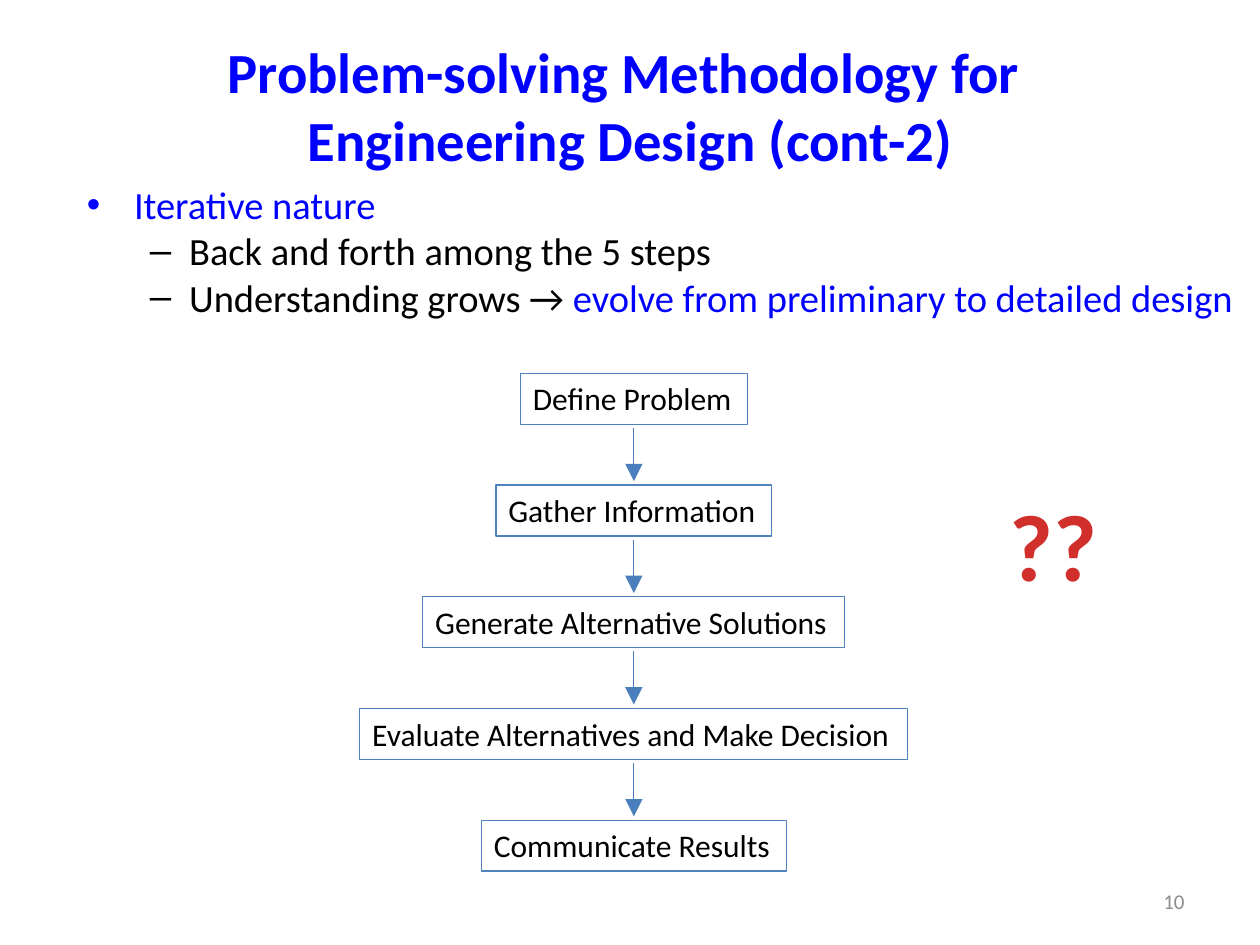
from lxml import etree
from pptx import Presentation
from pptx.dml.color import RGBColor
from pptx.enum import shapes, text
from pptx.oxml import ns
from pptx.util import Pt

BLUE = RGBColor(0x00, 0x00, 0xFF)
BLACK = RGBColor(0x00, 0x00, 0x00)
EDGE = RGBColor(0x4F, 0x81, 0xBD)
ARROW = RGBColor(0x4B, 0x7E, 0xBC)
RED = RGBColor(0xD0, 0x2F, 0x2C)
GRAY = RGBColor(0x8C, 0x8C, 0x8C)
FONT = "Calibri"

TITLE = "Problem-solving Methodology for \vEngineering Design (cont-2)"
# level, runs of (words, colour)
POINTS = [
    (0, [("Iterative nature", BLUE)]),
    (1, [("Back and forth among the 5 steps", BLACK)]),
    (1, [("Understanding grows → ", BLACK),
         ("evolve from preliminary to detailed design", BLUE)]),
]
# level -> bullet, left margin, hanging indent
BULLETS = [("•", 27, 27), ("–", 58.5, 22.5)]
# label, box width
STEPS = [
    ("Define Problem", 129.6),
    ("Gather Information", 157.7),
    ("Generate Alternative Solutions", 241.2),
    ("Evaluate Alternatives and Make Decision", 313.2),
    ("Communicate Results", 174.2),
]
AXIS, TOP, PITCH, HIGH, GAP = 362.2, 213.3, 63.85, 29.1, 2.2


def style(para, size, color, bold=False, align=text.PP_ALIGN.LEFT):
    font = para.font
    font.name, font.size, font.bold = FONT, Pt(size), bold
    font.color.rgb = color
    para.alignment = align


def label(slide, box, words, size, color, align, bold=False, wrap=True,
          anchor=text.MSO_ANCHOR.MIDDLE):
    frame = slide.shapes.add_textbox(*map(Pt, box)).text_frame
    frame.word_wrap = wrap
    frame.vertical_anchor = anchor
    frame.text = words
    style(frame.paragraphs[0], size, color, bold, align)


def bullet(para, level):
    mark, left, hang = BULLETS[level]
    para.level = level
    props = para._p.get_or_add_pPr()
    props.set("marL", str(Pt(left)))
    props.set("indent", str(-Pt(hang)))
    face = etree.Element(ns.qn("a:buFont"), typeface="Arial")
    char = etree.Element(ns.qn("a:buChar"), char=mark)
    props.insert(0, face)
    props.insert(1, char)


def list_points(slide):
    box = slide.shapes.add_textbox(Pt(42.5), Pt(100), Pt(675.4), Pt(33.8))
    frame = box.text_frame
    frame.word_wrap = True
    for i, (level, runs) in enumerate(POINTS):
        para = frame.paragraphs[0] if i == 0 else frame.add_paragraph()
        style(para, 22, runs[0][1])
        bullet(para, level)
        for words, color in runs:
            run = para.add_run()
            run.text = words
            run.font.color.rgb = color


def add_step(slide, words, wide, top):
    box = slide.shapes.add_shape(shapes.MSO_SHAPE.RECTANGLE,
                                 Pt(AXIS - wide / 2), Pt(top), Pt(wide), Pt(HIGH))
    box.shadow.inherit = False
    box.fill.background()
    box.line.color.rgb = EDGE
    box.line.width = Pt(0.75)
    frame = box.text_frame
    frame.word_wrap = True
    frame.margin_right = 0
    frame.vertical_anchor = text.MSO_ANCHOR.TOP
    frame.text = words
    style(frame.paragraphs[0], 18, BLACK)


def add_arrow(slide, start, end):
    line = slide.shapes.add_connector(shapes.MSO_CONNECTOR.STRAIGHT,
                                      Pt(AXIS), Pt(start), Pt(AXIS), Pt(end))
    line.line.color.rgb = ARROW
    line.line.width = Pt(0.75)
    etree.SubElement(line.line._get_or_add_ln(), ns.qn("a:tailEnd"),
                     type="triangle", w="lg", len="lg")
    etree.SubElement(line._element.spPr, ns.qn("a:effectLst"))


def main():
    deck = Presentation()
    deck.slide_width, deck.slide_height = Pt(720), Pt(540)
    slide = deck.slides.add_slide(deck.slide_layouts[6])
    align = text.PP_ALIGN
    label(slide, (36, 15.1, 648, 90), TITLE, 32.4, BLUE, align.CENTER, bold=True)
    list_points(slide)
    for i, (words, wide) in enumerate(STEPS):
        top = TOP + i * PITCH
        add_step(slide, words, wide, top)
        if i:
            add_arrow(slide, top - PITCH + HIGH + GAP, top - GAP)
    label(slide, (569.5, 275, 64.8, 72.7), "??", 54, RED, align.CENTER,
          bold=True, wrap=False, anchor=text.MSO_ANCHOR.TOP)
    label(slide, (516.2, 500.4, 167.8, 28.8), "10", 12, GRAY, align.RIGHT)
    deck.save("out.pptx")


if __name__ == "__main__":
    main()
